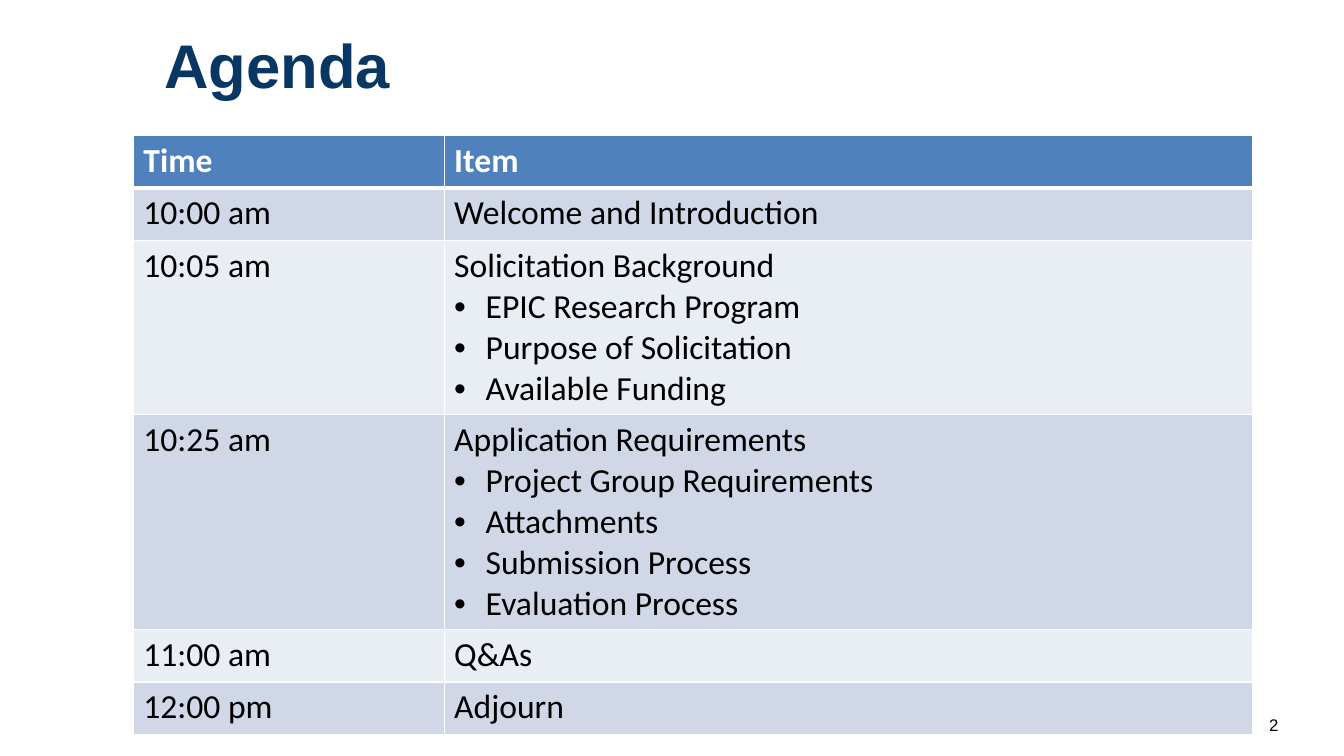
"""Build the agenda slide: a title, a timetable and a page number."""
from lxml.etree import SubElement
from pptx import Presentation
from pptx.dml.color import RGBColor
from pptx.enum.text import MSO_ANCHOR, PP_ALIGN
from pptx.oxml.ns import qn
from pptx.util import Pt

PX = 9525
NAVY = RGBColor(0x08, 0x37, 0x63)
BLUE = RGBColor(0x4F, 0x81, 0xBD)
BAND_DARK = RGBColor(0xD0, 0xD8, 0xE8)
BAND_LIGHT = RGBColor(0xE9, 0xED, 0xF4)
WHITE = RGBColor(0xFF, 0xFF, 0xFF)
BLACK = RGBColor(0, 0, 0)
INDENT = 30

AGENDA = [
    ("Time", ["Item"], 50),
    ("10:00 am", ["Welcome and Introduction"], 50),
    ("10:05 am", ["Solicitation Background", "EPIC Research Program",
                  "Purpose of Solicitation", "Available Funding"], 159),
    ("10:25 am", ["Application Requirements", "Project Group Requirements",
                  "Attachments", "Submission Process", "Evaluation Process"], 159),
    ("11:00 am", ["Q&As"], 50),
    ("12:00 pm", ["Adjourn"], 50),
]


def style(p, name, size, color, bold=False):
    for r in p.runs:
        for key, value in {"name": name, "size": Pt(size), "bold": bold}.items():
            setattr(r.font, key, value)
        r.font.color.rgb = color


def add_border(tcPr, index, side, width):
    ln = tcPr.makeelement(qn(f"a:ln{side}"), {"w": str(Pt(width))})
    fill = SubElement(ln, qn("a:solidFill"))
    SubElement(fill, qn("a:srgbClr"), val=str(WHITE))
    tcPr.insert(index, ln)


prs = Presentation()
prs.slide_width, prs.slide_height = 1280 * PX, 720 * PX
s = prs.slides.add_slide(prs.slide_layouts[5])

title = s.shapes.title
place = {"left": 147, "top": 11, "width": 1045, "height": 109}
for key, value in place.items():
    setattr(title, key, value * PX)
tf = title.text_frame
tf.text = "Agenda"
tf.vertical_anchor = MSO_ANCHOR.MIDDLE
p = tf.paragraphs[0]
p.alignment = PP_ALIGN.LEFT
p.line_spacing = 0.9
style(p, "Arial", 44, NAVY, True)

frame = s.shapes.add_table(len(AGENDA), 2, 127 * PX, 129 * PX, 1066 * PX, 518 * PX)
table = frame.table
for column, width in zip(table.columns, (296, 770)):
    column.width = width * PX

for i, (time, items, height) in enumerate(AGENDA):
    table.rows[i].height = height * PX
    header = i == 0
    band = BLUE if header else BAND_DARK if i % 2 else BAND_LIGHT
    for cell, lines in zip(table.rows[i].cells, ([time], items)):
        cell.text = "\n".join(lines)
        cell.fill.solid()
        cell.fill.fore_color.rgb = band
        widths = {"L": 1, "R": 1, "T": 3 if i == 1 else 1, "B": 3 if header else 1}
        for index, (side, width) in enumerate(widths.items()):
            add_border(cell._tc.get_or_add_tcPr(), index, side, width)
        for n, p in enumerate(cell.text_frame.paragraphs):
            if n:
                pPr = p._p.get_or_add_pPr()
                pPr.set("marL", str(INDENT * PX))
                pPr.set("indent", str(-INDENT * PX))
                SubElement(pPr, qn("a:buFont"), typeface="Arial")
                SubElement(pPr, qn("a:buChar"), char="•")
            style(p, "Calibri", 24, WHITE if header else BLACK, header)

number = s.shapes.add_textbox(1038 * PX, 671 * PX, 189 * PX, 38 * PX)
tf = number.text_frame
tf.word_wrap = True
tf.vertical_anchor = MSO_ANCHOR.MIDDLE
tf.text = "2"
p = tf.paragraphs[0]
p.alignment = PP_ALIGN.RIGHT
style(p, "Arial", 12, BLACK)

prs.save("out.pptx")
